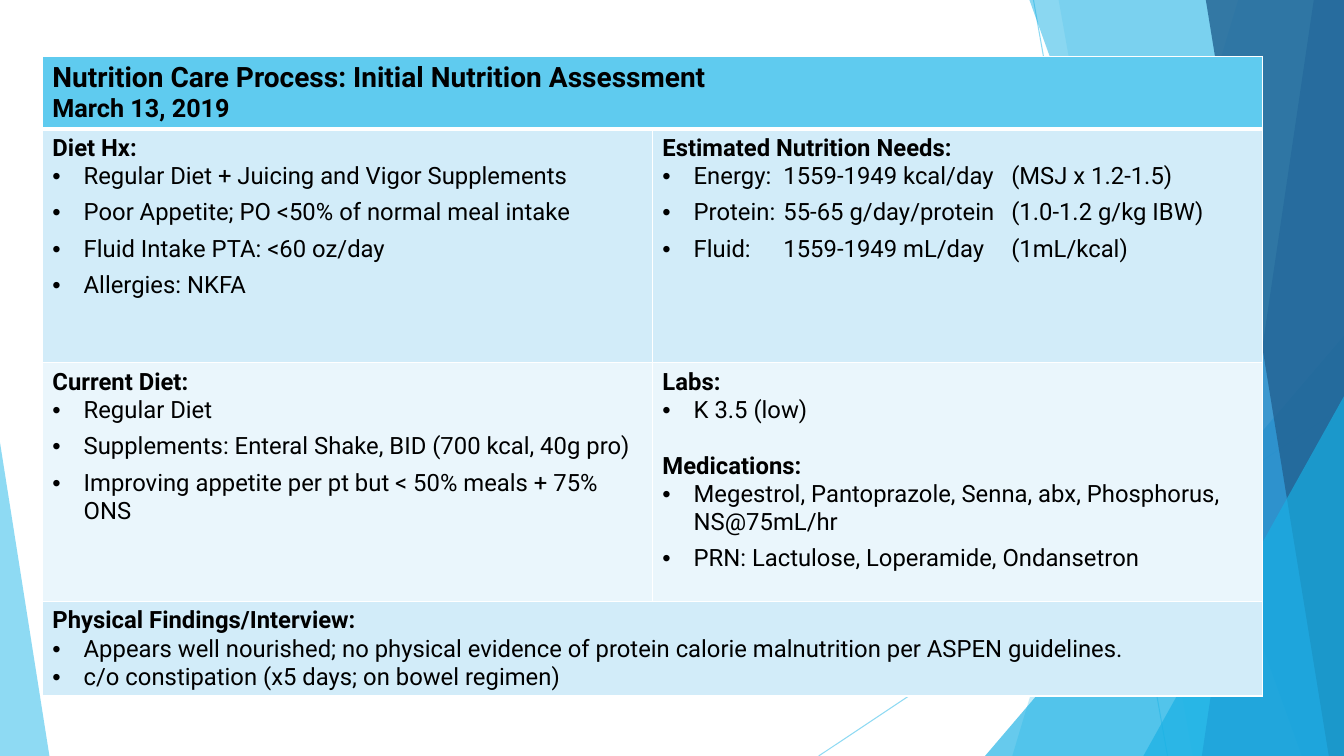
from lxml import etree
from pptx import Presentation, util as u
from pptx.dml.color import RGBColor
from pptx.enum import shapes, text
from pptx.oxml import ns

WIDTH, HEIGHT = 13.33, 7.5
FONT = "Roboto"
SKY, AZURE, BLUE, NAVY = "5FCBEF", "17B0E4", "2E83C3", "226292"
PALE, PALER, WHITE, BLACK = "D2ECF9", "EAF6FC", "FFFFFF", "000000"
INDENT = 0.31
TAB_STOPS = (1.2, 3.46)

# Ribbons of the right edge, back to front: kind, geometry, colour, opacity
# A band gives its top and bottom x; a triangle gives its left and top.
RIBBONS = [
    ("band", (12.28, 10.04), SKY, 36),
    ("band", (10.5, 11.83), SKY, 20),
    ("triangle", (9.77, 3.33), AZURE, 66),
    ("band", (10.21, 12.91), AZURE, 50),
    ("band", (13.03, 11.92), BLUE, 70),
    ("band", (11.96, 13.18), NAVY, 80),
    ("triangle", (11.34, 3.93), AZURE, 66),
]

# Each cell holds sections: heading, bulleted items, points after each item
DIET_HISTORY = [("Diet Hx:", [
    "Regular Diet + Juicing and Vigor Supplements",
    "Poor Appetite; PO <50% of normal meal intake",
    "Fluid Intake PTA: <60 oz/day",
    "Allergies: NKFA"], 6)]
NEEDS = [("Estimated Nutrition Needs:", [
    "Energy:\t1559-1949 kcal/day\t(MSJ x 1.2-1.5)",
    "Protein:\t55-65 g/day/protein\t(1.0-1.2 g/kg IBW)",
    "Fluid:\t1559-1949 mL/day\t(1mL/kcal)"], 6)]
CURRENT_DIET = [("Current Diet:", [
    "Regular Diet",
    "Supplements: Enteral Shake, BID (700 kcal, 40g pro)",
    "Improving appetite per pt but < 50% meals + 75% ONS"], 6)]
LABS_AND_MEDICATIONS = [
    ("Labs:", ["K 3.5 (low)"], 0),
    ("Medications:", [
        "Megestrol, Pantoprazole, Senna, abx, Phosphorus, NS@75mL/hr",
        "PRN: Lactulose, Loperamide, Ondansetron"], 6)]
FINDINGS = [("Physical Findings/Interview:", [
    "Appears well nourished; no physical evidence of protein calorie "
    "malnutrition per ASPEN guidelines.",
    "c/o constipation (x5 days; on bowel regimen)"], 0)]


def color(value):
    return RGBColor.from_string(value)


def add_xml(parent, tag, **attributes):
    return etree.SubElement(parent, ns.qn(tag), attributes)


def set_opacity(element, percent):
    for rgb in element.iter(ns.qn("a:srgbClr")):
        add_xml(rgb, "a:alpha", val=str(percent * 1000))


def paint(shape, fill, opacity):
    shape.shadow.inherit = False
    shape.fill.solid()
    shape.fill.fore_color.rgb = color(fill)
    shape.line.fill.background()
    set_opacity(shape._element.spPr, opacity)


# Background ribbons
def add_band(slide, top_x, bottom_x, fill, opacity):
    builder = slide.shapes.build_freeform(u.Inches(top_x), 0)
    corners = [(WIDTH, 0), (WIDTH, HEIGHT), (bottom_x, HEIGHT)]
    builder.add_line_segments([(u.Inches(x), u.Inches(y)) for x, y in corners])
    paint(builder.convert_to_shape(), fill, opacity)


def add_triangle(slide, left, top, width, apex, fill, opacity):
    triangle = slide.shapes.add_shape(
        shapes.MSO_SHAPE.ISOSCELES_TRIANGLE,
        *map(u.Inches, (left, top, width, HEIGHT - top)))
    triangle.adjustments[0] = apex
    paint(triangle, fill, opacity)


def add_thin_line(slide, *ends):
    line = slide.shapes.add_connector(
        shapes.MSO_CONNECTOR.STRAIGHT, *map(u.Inches, ends))
    line.line.color.rgb = color(SKY)
    line.line.width = u.Pt(0.75)
    properties = line._element.spPr
    set_opacity(properties, 70)
    add_xml(properties, "a:effectLst")


def add_background(slide):
    add_thin_line(slide, 10.25, 0, 11.58, HEIGHT)
    add_thin_line(slide, WIDTH, 4.03, 8.12, HEIGHT)
    for kind, (first, second), fill, opacity in RIBBONS:
        if kind == "band":
            add_band(slide, first, second, fill, opacity)
        else:
            add_triangle(slide, first, second, WIDTH - first, 1, fill, opacity)
    add_triangle(slide, 0, 4.39, 0.49, 0, SKY, 70)


# Table text
def add_run(paragraph, words, size, bold):
    run = paragraph.add_run()
    run.text = words
    run.font.color.rgb = color(BLACK)
    for name, value in {"name": FONT, "size": u.Pt(size), "bold": bold}.items():
        setattr(run.font, name, value)


def add_bullet(paragraph, with_tabs):
    properties = paragraph._p.get_or_add_pPr()
    indent = u.Inches(INDENT)
    properties.set("marL", str(indent))
    properties.set("indent", str(-indent))
    add_xml(properties, "a:buFont", typeface="Arial")
    add_xml(properties, "a:buChar", char="•")
    if with_tabs:
        tabs = add_xml(properties, "a:tabLst")
        for stop in TAB_STOPS:
            add_xml(tabs, "a:tab", pos=str(u.Inches(stop)), algn="l")


def write_sections(cell, sections):
    frame = cell.text_frame
    for number, (heading, items, gap) in enumerate(sections):
        paragraph = frame.add_paragraph() if number else frame.paragraphs[0]
        if number:
            paragraph.space_before = u.Pt(20)
        add_run(paragraph, heading, 17, True)
        for item in items:
            paragraph = frame.add_paragraph()
            add_bullet(paragraph, "\t" in item)
            paragraph.space_after = u.Pt(gap)
            add_run(paragraph, item, 17, False)


def write_header(cell):
    paragraph = cell.text_frame.paragraphs[0]
    add_run(paragraph, "Nutrition Care Process: Initial Nutrition Assessment", 20, True)
    paragraph.add_line_break()
    add_run(paragraph, "March 13, 2019", 18, True)


def format_cell(cell, fill, top, bottom):
    properties = cell._tc.get_or_add_tcPr()
    for tag, width in {"a:lnL": 1, "a:lnR": 1, "a:lnT": top, "a:lnB": bottom}.items():
        border = add_xml(properties, tag, w=str(u.Pt(width)))
        add_xml(add_xml(border, "a:solidFill"), "a:srgbClr", val=WHITE)
    cell.fill.solid()
    cell.fill.fore_color.rgb = color(fill)
    cell.vertical_anchor = text.MSO_ANCHOR.TOP


# Assessment table
def add_assessment(slide, left, top, width, row_heights):
    table = slide.shapes.add_table(
        len(row_heights), 2,
        *map(u.Inches, (left, top, width, sum(row_heights)))).table
    table.first_row = table.horz_banding = False
    fills = (SKY, PALE, PALER, PALE)
    for index, (height, fill) in enumerate(zip(row_heights, fills)):
        table.rows[index].height = u.Inches(height)
        for cell in table.rows[index].cells:
            format_cell(cell, fill, 3 if index == 1 else 1, 3 if index == 0 else 1)
    for index in (0, 3):
        table.cell(index, 0).merge(table.cell(index, 1))
    write_header(table.cell(0, 0))
    contents = {(1, 0): DIET_HISTORY, (1, 1): NEEDS, (2, 0): CURRENT_DIET,
                (2, 1): LABS_AND_MEDICATIONS, (3, 0): FINDINGS}
    for position, sections in contents.items():
        write_sections(table.cell(*position), sections)


def main():
    presentation = Presentation()
    presentation.slide_width = u.Inches(WIDTH)
    presentation.slide_height = u.Inches(HEIGHT)
    slide = presentation.slides.add_slide(presentation.slide_layouts[6])
    add_background(slide)
    add_assessment(slide, 0.42, 0.56, 12.1, (0.66, 2.32, 2.37, 0.75))
    presentation.save("out.pptx")


if __name__ == "__main__":
    main()
